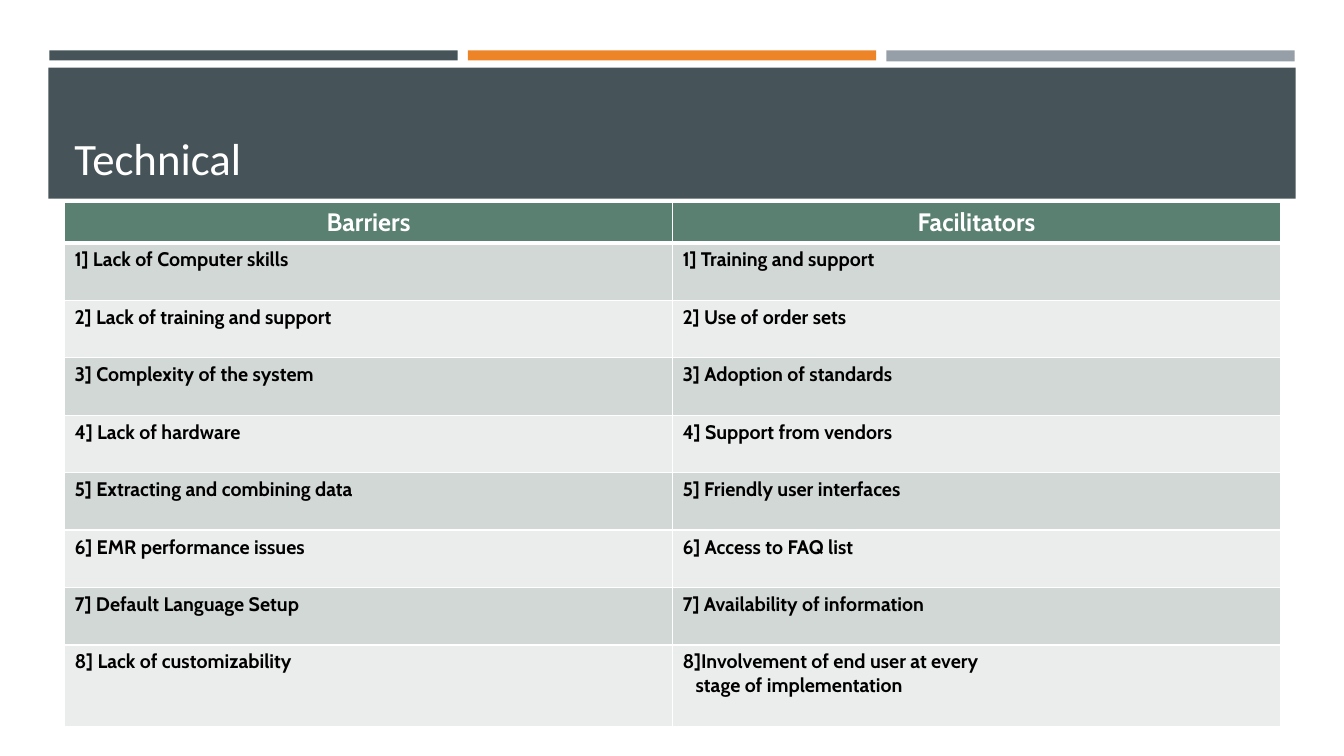
from dataclasses import dataclass

import lxml.etree
import pptx
import pptx.dml.color
import pptx.enum.shapes
import pptx.enum.text
import pptx.oxml.ns
import pptx.util

Inches = pptx.util.Inches
Pt = pptx.util.Pt
RGBColor = pptx.dml.color.RGBColor
PP_ALIGN = pptx.enum.text.PP_ALIGN

SLATE = RGBColor(0x46, 0x53, 0x59)
ORANGE = RGBColor(0xED, 0x84, 0x28)
GRAY = RGBColor(0x96, 0x9F, 0xA7)
GREEN = RGBColor(0x5A, 0x80, 0x71)
BAND_DARK = RGBColor(0xD2, 0xD8, 0xD5)
BAND_LIGHT = RGBColor(0xEA, 0xED, 0xEB)
WHITE = RGBColor(0xFF, 0xFF, 0xFF)
BLACK = RGBColor(0x00, 0x00, 0x00)

TITLE_FONT = {"name": "Calibri", "size": Pt(32)}
HEADER_FONT = {"name": "Cabin", "size": Pt(18), "bold": True}
BODY_FONT = {"name": "Cabin", "size": Pt(14), "bold": True}

CONTENT_LEFT = 0.64
CONTENT_WIDTH = 12.06
HEADER_HEIGHT = 0.4
ROW_HEIGHT = 0.57
LAST_ROW_HEIGHT = 0.81
CONTINUATION_INDENT = 0.13


@dataclass
class Bar:
    left: float
    top: float
    width: float
    height: float
    color: RGBColor


BARS = [
    Bar(0.49, 0.5, 4.05, 0.1, SLATE),
    Bar(4.64, 0.5, 4.05, 0.1, ORANGE),
    Bar(8.79, 0.5, 4.05, 0.11, GRAY),
    Bar(0.48, 0.67, 12.37, 1.3, SLATE),
]

ROWS = [
    ("Barriers", "Facilitators"),
    ("1] Lack of Computer skills", "1] Training and support"),
    ("2] Lack of training and support", "2] Use of order sets"),
    ("3] Complexity of the system", "3] Adoption of standards"),
    ("4] Lack of hardware", "4] Support from vendors"),
    ("5] Extracting and combining data", "5] Friendly user interfaces"),
    ("6] EMR performance issues", "6] Access to FAQ list"),
    ("7] Default Language Setup", "7] Availability of information"),
    ("8] Lack of customizability", "8]Involvement of end user at every\nstage of implementation"),
]


def write_line(paragraph, text: str, font_format: dict, color: RGBColor) -> None:
    run = paragraph.add_run()
    run.text = text
    for name, value in font_format.items():
        setattr(run.font, name, value)
    run.font.color.rgb = color


def draw_bar(slide, bar: Bar) -> None:
    shape = slide.shapes.add_shape(
        pptx.enum.shapes.MSO_SHAPE.RECTANGLE,
        Inches(bar.left), Inches(bar.top), Inches(bar.width), Inches(bar.height),
    )
    shape.shadow.inherit = False
    shape.fill.solid()
    shape.fill.fore_color.rgb = bar.color
    shape.line.fill.background()


def draw_title(slide, text: str) -> None:
    title = slide.shapes.add_textbox(
        Inches(CONTENT_LEFT), Inches(0.77), Inches(CONTENT_WIDTH), Inches(1.11)
    )
    frame = title.text_frame
    frame.word_wrap = True
    frame.vertical_anchor = pptx.enum.text.MSO_ANCHOR.BOTTOM
    write_line(frame.paragraphs[0], text, TITLE_FONT, WHITE)


def set_borders(cell, widths: dict) -> None:
    properties = cell._tc.get_or_add_tcPr()
    qn = pptx.oxml.ns.qn
    for side, width in widths.items():
        line = lxml.etree.SubElement(properties, qn(f"a:ln{side}"), w=str(Pt(width)))
        fill = lxml.etree.SubElement(line, qn("a:solidFill"))
        lxml.etree.SubElement(fill, qn("a:srgbClr"), val=str(WHITE))


def fill_cell(cell, text: str, row_index: int) -> None:
    is_header = row_index == 0
    set_borders(cell, {
        "L": 1, "R": 1,
        "T": 3 if row_index == 1 else 1,
        "B": 3 if is_header else 1,
    })
    band = BAND_DARK if row_index % 2 else BAND_LIGHT
    cell.fill.solid()
    cell.fill.fore_color.rgb = GREEN if is_header else band
    frame = cell.text_frame
    for index, line in enumerate(text.split("\n")):
        paragraph = frame.add_paragraph() if index else frame.paragraphs[0]
        paragraph.alignment = PP_ALIGN.CENTER if is_header else PP_ALIGN.LEFT
        if index:
            paragraph._p.get_or_add_pPr().set("marL", str(Inches(CONTINUATION_INDENT)))
        write_line(
            paragraph, line,
            HEADER_FONT if is_header else BODY_FONT,
            WHITE if is_header else BLACK,
        )


def draw_table(slide, rows: list) -> None:
    heights = [HEADER_HEIGHT] + [ROW_HEIGHT] * (len(rows) - 2) + [LAST_ROW_HEIGHT]
    table = slide.shapes.add_table(
        len(rows), len(rows[0]), Inches(CONTENT_LEFT), Inches(2.01),
        Inches(CONTENT_WIDTH), Inches(sum(heights)),
    ).table
    for row_index, (texts, height) in enumerate(zip(rows, heights)):
        table.rows[row_index].height = Inches(height)
        for column_index, text in enumerate(texts):
            fill_cell(table.cell(row_index, column_index), text, row_index)


def main() -> None:
    presentation = pptx.Presentation()
    presentation.slide_width = Inches(13.33)
    presentation.slide_height = Inches(7.5)
    slide = presentation.slides.add_slide(presentation.slide_layouts[6])
    for bar in BARS:
        draw_bar(slide, bar)
    draw_title(slide, "Technical")
    draw_table(slide, ROWS)
    presentation.save("out.pptx")


if __name__ == "__main__":
    main()
